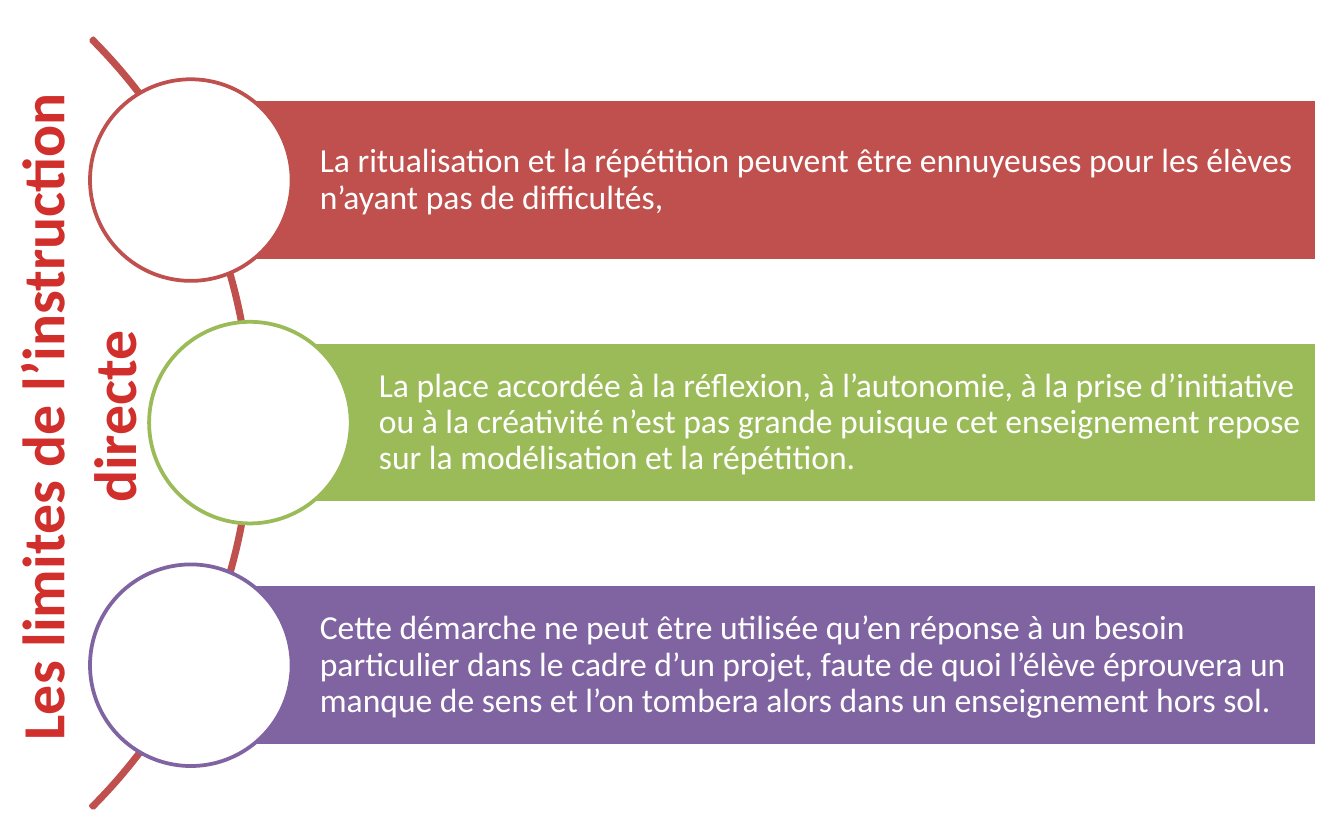
from pptx import Presentation
from pptx.dml.color import RGBColor
from pptx.enum.shapes import MSO_SHAPE as Shape
from pptx.enum.text import MSO_ANCHOR as Anchor, MSO_AUTO_SIZE as AutoSize, PP_ALIGN as Align
from pptx.util import Inches, Pt

COLORS = {
    "red": "C0504D",
    "green": "9BBB59",
    "purple": "8064A2",
    "title": "D02F2C",
    "white": "FFFFFF",
}
FONT = "Calibri"
TITLE = "Les limites de l’instruction directe"
LIMITS = [
    ("red", 1.42, "La ritualisation et la répétition peuvent être ennuyeuses pour les élèves "
                  "n’ayant pas de difficultés,"),
    ("green", 1.86, "La place accordée à la réflexion, à l’autonomie, à la prise d’initiative "
                    "ou à la créativité n’est pas grande puisque cet enseignement repose "
                    "sur la modélisation et la répétition."),
    ("purple", 1.42, "Cette démarche ne peut être utilisée qu’en réponse à un besoin "
                     "particulier dans le cadre d’un projet, faute de quoi l’élève éprouvera un "
                     "manque de sens et l’on tombera alors dans un enseignement hors sol."),
]
FIRST_CENTER, ROW_STEP = 1.34, 1.805
BAR_RIGHT, BAR_HEIGHT = 9.8, 1.2
CIRCLE_SIZE = 1.5


def color(name):
    return RGBColor.from_string(COLORS[name])


def format_text(paragraph, size, color_name, bold=False):
    for run in paragraph.runs:
        run.font.name = FONT
        run.font.size = Pt(size)
        run.font.bold = bold
        run.font.color.rgb = color(color_name)


def add_shape(slide, kind, left, top, width, height, fill, line):
    shape = slide.shapes.add_shape(kind, Inches(left), Inches(top), Inches(width), Inches(height))
    shape.shadow.inherit = False
    if fill:
        shape.fill.solid()
        shape.fill.fore_color.rgb = color(fill)
    else:
        shape.fill.background()
    shape.line.color.rgb = color(line)
    shape.line.width = Pt(2)
    return shape


def add_arc(slide):
    arc = add_shape(slide, Shape.BLOCK_ARC, -6.22, -0.9, 8.1, 8.1, None, "red")
    for index, value in enumerate((189, 27, 0.003)):
        arc.adjustments[index] = value


def add_bar(slide, left, center, color_name, text):
    bar = add_shape(slide, Shape.RECTANGLE, left, center - BAR_HEIGHT / 2,
                    BAR_RIGHT - left, BAR_HEIGHT, color_name, "white")
    frame = bar.text_frame
    frame.text = text
    frame.word_wrap = True
    frame.vertical_anchor = Anchor.MIDDLE
    frame.margin_left = Inches(0.96)
    frame.margin_top = frame.margin_right = frame.margin_bottom = Inches(0.05)
    paragraph = frame.paragraphs[0]
    paragraph.alignment = Align.LEFT
    paragraph.line_spacing = 0.9
    format_text(paragraph, 18, "white")


def add_circle(slide, center_x, center_y, color_name):
    add_shape(slide, Shape.OVAL, center_x - CIRCLE_SIZE / 2, center_y - CIRCLE_SIZE / 2,
              CIRCLE_SIZE, CIRCLE_SIZE, "white", color_name)


def set_title(slide):
    title = slide.shapes.title
    title.left, title.top = Inches(-2.55), Inches(2.51)
    title.width, title.height = Inches(6.25), Inches(1.18)
    title.rotation = 270
    frame = title.text_frame
    frame.text = TITLE
    frame.word_wrap = True
    frame.auto_size = AutoSize.NONE
    frame.vertical_anchor = Anchor.TOP
    paragraph = frame.paragraphs[0]
    paragraph.alignment = Align.CENTER
    format_text(paragraph, 32, "title", bold=True)


def main():
    presentation = Presentation()
    presentation.slide_width = Inches(10)
    presentation.slide_height = Inches(6.25)
    slide = presentation.slides.add_slide(presentation.slide_layouts[5])
    set_title(slide)
    add_arc(slide)
    for row, (color_name, left, text) in enumerate(LIMITS):
        center = FIRST_CENTER + row * ROW_STEP
        add_bar(slide, left, center, color_name, text)
        add_circle(slide, left, center, color_name)
    presentation.save("out.pptx")


if __name__ == "__main__":
    main()
